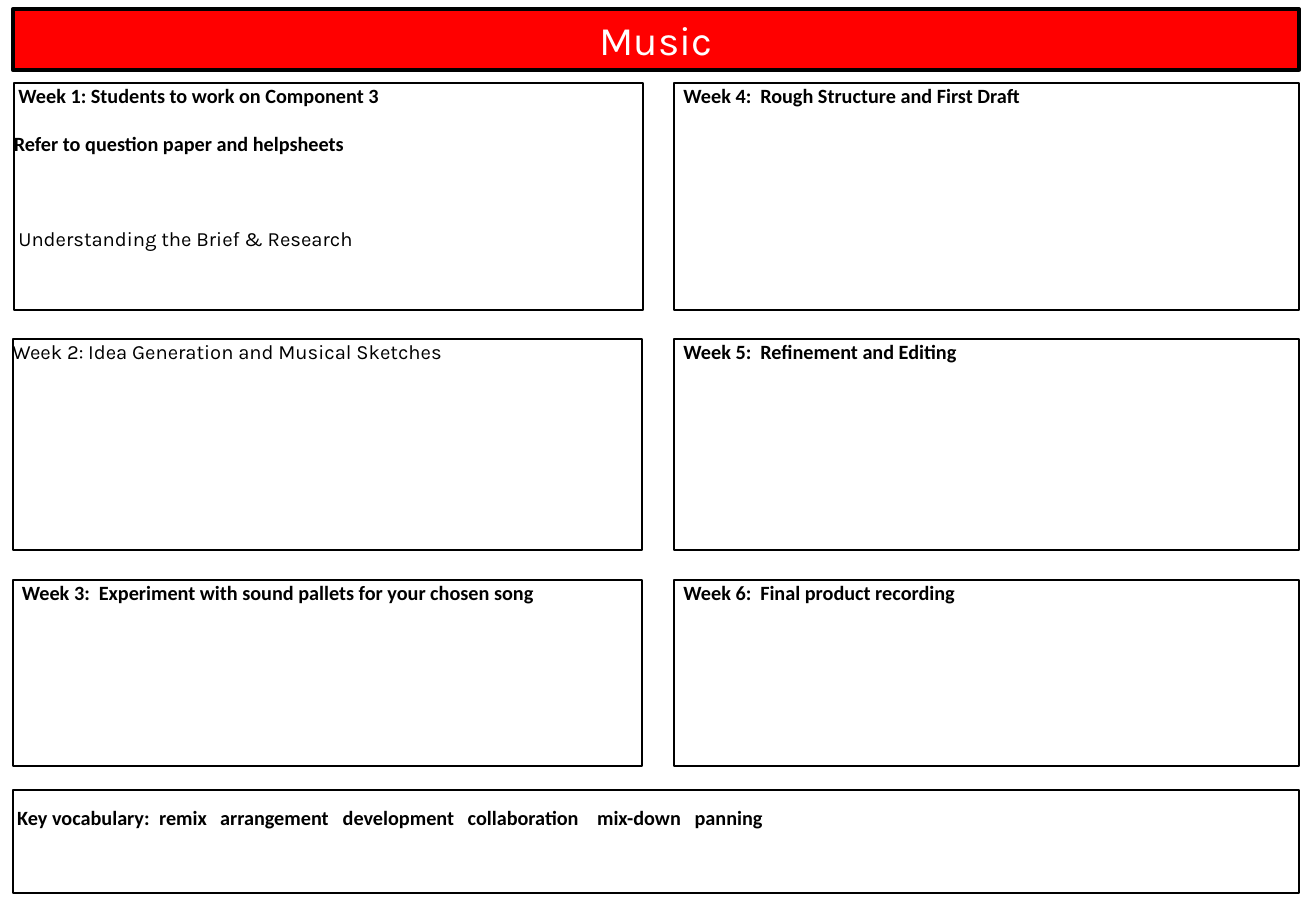
from dataclasses import dataclass

from lxml.etree import SubElement
from pptx import Presentation
from pptx.dml.color import RGBColor
from pptx.enum.shapes import MSO_SHAPE as SHAPE
from pptx.enum.text import MSO_ANCHOR as ANCHOR, PP_ALIGN as ALIGN
from pptx.oxml.ns import qn
from pptx.util import Pt


@dataclass(frozen=True)
class Theme:
    """Colours, fonts and sizes of the planner."""
    black: RGBColor = RGBColor(0, 0, 0)
    white: RGBColor = RGBColor(255, 255, 255)
    red: RGBColor = RGBColor(255, 0, 0)
    body_font: str = "Calibri"
    accent_font: str = "Karla"
    body_size: float = 12
    title_size: float = 24
    border: float = 1
    title_border: float = 2.25


THEME = Theme()
LEFT, LEFT_WIDTH = 7.5, 373
RIGHT, RIGHT_WIDTH = 399.6, 370.4
FULL_WIDTH = RIGHT + RIGHT_WIDTH - LEFT
ROWS = [(49.4, 134.6), (200.9, 125.3), (343.9, 110.2)]
WEEK_INSET, NOTE_INDENT = 5.4, 2.7
WEEK_TABS = [45.6]
VOCABULARY_TABS = [84.1, 120.3, 192.9, 267, 343.7, 401.5]
VOCABULARY = ["Key vocabulary:", "remix", "arrangement", "development",
              "collaboration", "mix-down", "panning"]


def add_box(slide, x, y, w, h, inset=(0, 0), fill=None, border=THEME.border):
    """Add a bordered rectangle and return its text frame."""
    sp = slide.shapes.add_shape(SHAPE.RECTANGLE, Pt(x), Pt(y), Pt(w), Pt(h))
    sp.shadow.inherit = False
    if fill is None:
        sp.fill.background()
    else:
        sp.fill.solid()
        sp.fill.fore_color.rgb = fill
    sp.line.color.rgb = THEME.black
    sp.line.width = Pt(border)
    tf = sp.text_frame
    tf.word_wrap = True
    tf.vertical_anchor = ANCHOR.TOP
    tf.margin_left, tf.margin_top = Pt(inset[0]), Pt(inset[1])
    tf.margin_right = tf.margin_bottom = 0
    return tf


def write(p, text, font=THEME.body_font, size=THEME.body_size, bold=True,
          color=THEME.black, align=ALIGN.LEFT, tabs=(), indent=0, before=0):
    """Set the text of a paragraph and format it."""
    p.text = text
    p.alignment = align
    p.space_before = Pt(before)
    pPr = p._p.get_or_add_pPr()
    if indent:
        pPr.set("marL", str(Pt(indent)))
    if tabs:
        tab_list = SubElement(pPr, qn("a:tabLst"))
        for pos in tabs:
            SubElement(tab_list, qn("a:tab"), pos=str(Pt(pos)), algn="l")
    for r in p.runs:
        r.font.name, r.font.size, r.font.bold = font, Pt(size), bold
        r.font.color.rgb = color


def add_title(slide, text):
    """Add the red title banner."""
    tf = add_box(slide, LEFT, 5.4, FULL_WIDTH, 36, (0, 3.6), THEME.red, THEME.title_border)
    write(tf.paragraphs[0], text, THEME.accent_font, THEME.title_size, False,
          THEME.white, ALIGN.CENTER)


def add_week(slide, x, w, row, number, topic):
    """Add a week box with its number and topic."""
    tf = add_box(slide, x, ROWS[row][0], w, ROWS[row][1], (WEEK_INSET, 0))
    write(tf.paragraphs[0], f"Week {number}:\t{topic}", tabs=WEEK_TABS)


def add_brief_week(slide):
    """Add the first week box with its three lines."""
    tf = add_box(slide, LEFT + 0.7, ROWS[0][0], LEFT_WIDTH, ROWS[0][1])
    write(tf.paragraphs[0], "Week 1: Students to work on Component 3", indent=NOTE_INDENT)
    write(tf.add_paragraph(), "Refer to question paper and helpsheets", before=13.9)
    write(tf.add_paragraph(), "Understanding the Brief & Research", THEME.accent_font,
          bold=False, indent=NOTE_INDENT, before=41.9)


def add_ideas_week(slide):
    """Add the second week box in the accent font."""
    tf = add_box(slide, LEFT, ROWS[1][0], LEFT_WIDTH, ROWS[1][1])
    write(tf.paragraphs[0], "Week 2: Idea Generation and Musical Sketches",
          THEME.accent_font, bold=False)


def add_vocabulary(slide):
    """Add the key vocabulary box."""
    tf = add_box(slide, LEFT, 468.4, FULL_WIDTH, 60.8, (NOTE_INDENT, 11.7))
    p = tf.paragraphs[0]
    p.line_spacing = Pt(11.5)
    write(p, "\t".join(VOCABULARY), tabs=VOCABULARY_TABS)


def main():
    """Build and save the planner."""
    prs = Presentation()
    prs.slide_width, prs.slide_height = Pt(780), Pt(540)
    s = prs.slides.add_slide(prs.slide_layouts[6])
    add_title(s, "Music")
    add_brief_week(s)
    add_ideas_week(s)
    add_week(s, LEFT, LEFT_WIDTH, 2, 3, "Experiment with sound pallets for your chosen song")
    topics = ["Rough Structure and First Draft", "Refinement and Editing",
              "Final product recording"]
    for row, topic in enumerate(topics):
        add_week(s, RIGHT, RIGHT_WIDTH, row, row + 4, topic)
    add_vocabulary(s)
    prs.save("out.pptx")


if __name__ == "__main__":
    main()
